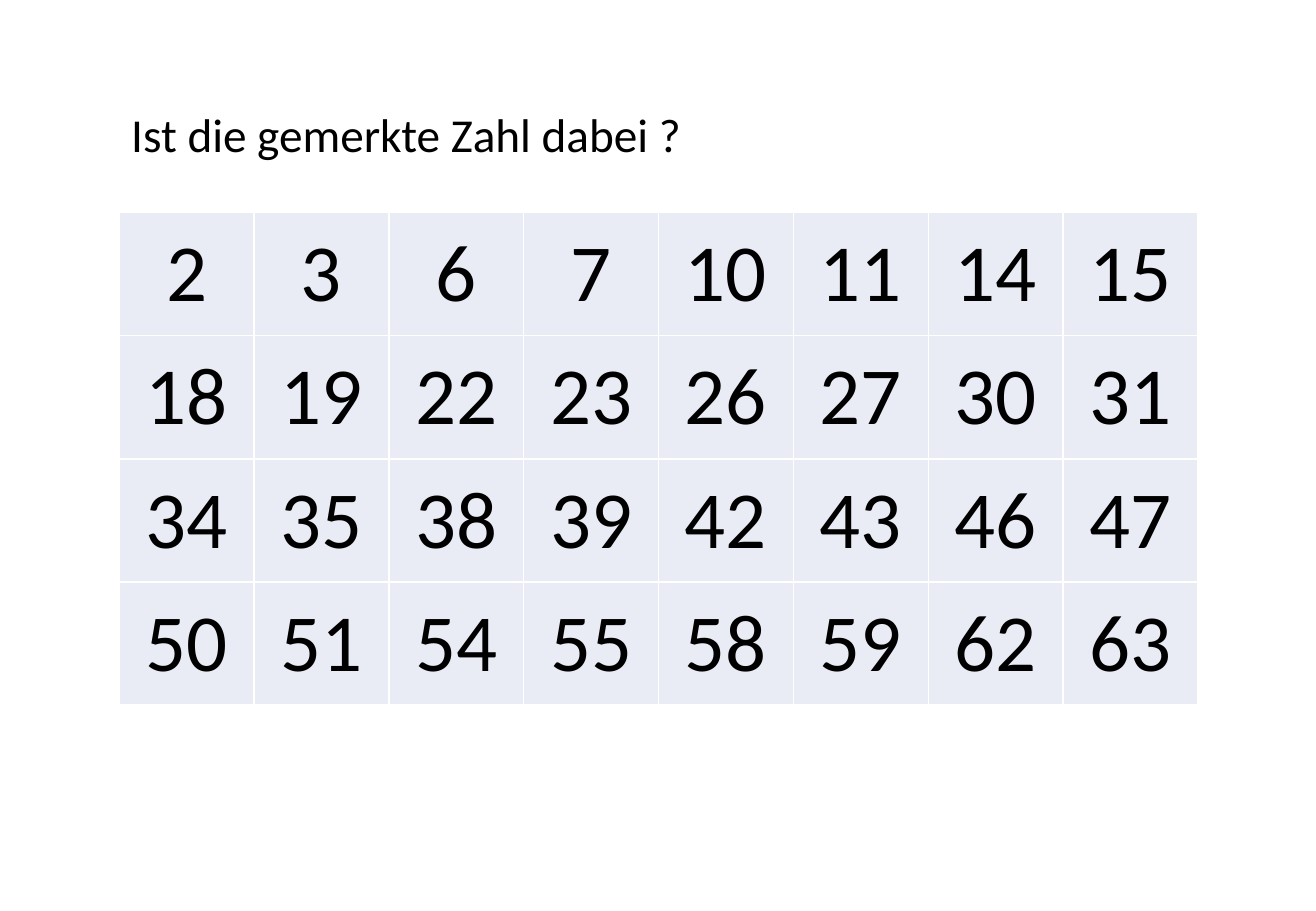
"""Build the number card slide with its question and grid of numbers."""
import lxml.etree
import pptx
import pptx.dml.color
import pptx.enum.text
import pptx.oxml.ns
import pptx.util

INK = pptx.dml.color.RGBColor(0x00, 0x00, 0x00)
PALE = pptx.dml.color.RGBColor(0xE9, 0xEB, 0xF5)
WHITE = pptx.dml.color.RGBColor(0xFF, 0xFF, 0xFF)
FONT = "Calibri"
COLS, ROWS = 8, 4
CELL_W, CELL_H = 1.11, 1.01
LEFT, TOP = 0.98, 1.75
BIT = 2
CARD = [n for n in range(64) if n & BIT]


def style(para, size, align):
    """Set the font and alignment of one paragraph."""
    para.alignment = align
    para.font.name = FONT
    para.font.size = pptx.util.Pt(size)
    para.font.color.rgb = INK


def edge(cell):
    """Draw a thin white line on all sides of a cell."""
    props = cell._tc.get_or_add_tcPr()
    qn = pptx.oxml.ns.qn
    for side in ("a:lnL", "a:lnR", "a:lnT", "a:lnB"):
        line = lxml.etree.SubElement(props, qn(side), w=str(pptx.util.Pt(1)))
        fill = lxml.etree.SubElement(line, qn("a:solidFill"))
        lxml.etree.SubElement(fill, qn("a:srgbClr"), val=str(WHITE))


def add_head(slide, text):
    """Place the question in the title placeholder."""
    head = slide.shapes.title
    head.left, head.top, head.width, head.height = map(
        pptx.util.Inches, (LEFT, 0.82, 4.77, 0.57))
    frame = head.text_frame
    frame.text = text
    frame.word_wrap = False
    frame.auto_size = pptx.enum.text.MSO_AUTO_SIZE.NONE
    frame.vertical_anchor = pptx.enum.text.MSO_ANCHOR.TOP
    style(frame.paragraphs[0], 28, pptx.enum.text.PP_ALIGN.LEFT)
    frame.paragraphs[0].line_spacing = 1.0


def add_grid(slide, nums):
    """Add the table and fill it row by row with the numbers."""
    box = map(pptx.util.Inches, (LEFT, TOP, COLS * CELL_W, ROWS * CELL_H))
    table = slide.shapes.add_table(ROWS, COLS, *box).table
    table.first_row = table.horz_banding = False
    for cell, num in zip(table.iter_cells(), nums):
        cell.text = str(num)
        cell.margin_left = cell.margin_right = pptx.util.Inches(0.04)
        cell.margin_top = cell.margin_bottom = pptx.util.Inches(0.1)
        edge(cell)
        cell.fill.solid()
        cell.fill.fore_color.rgb = PALE
        style(cell.text_frame.paragraphs[0], 48,
              pptx.enum.text.PP_ALIGN.CENTER)


def main():
    """Create the slide and save it."""
    deck = pptx.Presentation()
    deck.slide_width = pptx.util.Inches(10.83)
    deck.slide_height = pptx.util.Inches(7.5)
    slide = deck.slides.add_slide(deck.slide_layouts.get_by_name("Title Only"))
    add_head(slide, "Ist die gemerkte Zahl dabei ?")
    add_grid(slide, CARD)
    deck.save("out.pptx")


if __name__ == "__main__":
    main()
